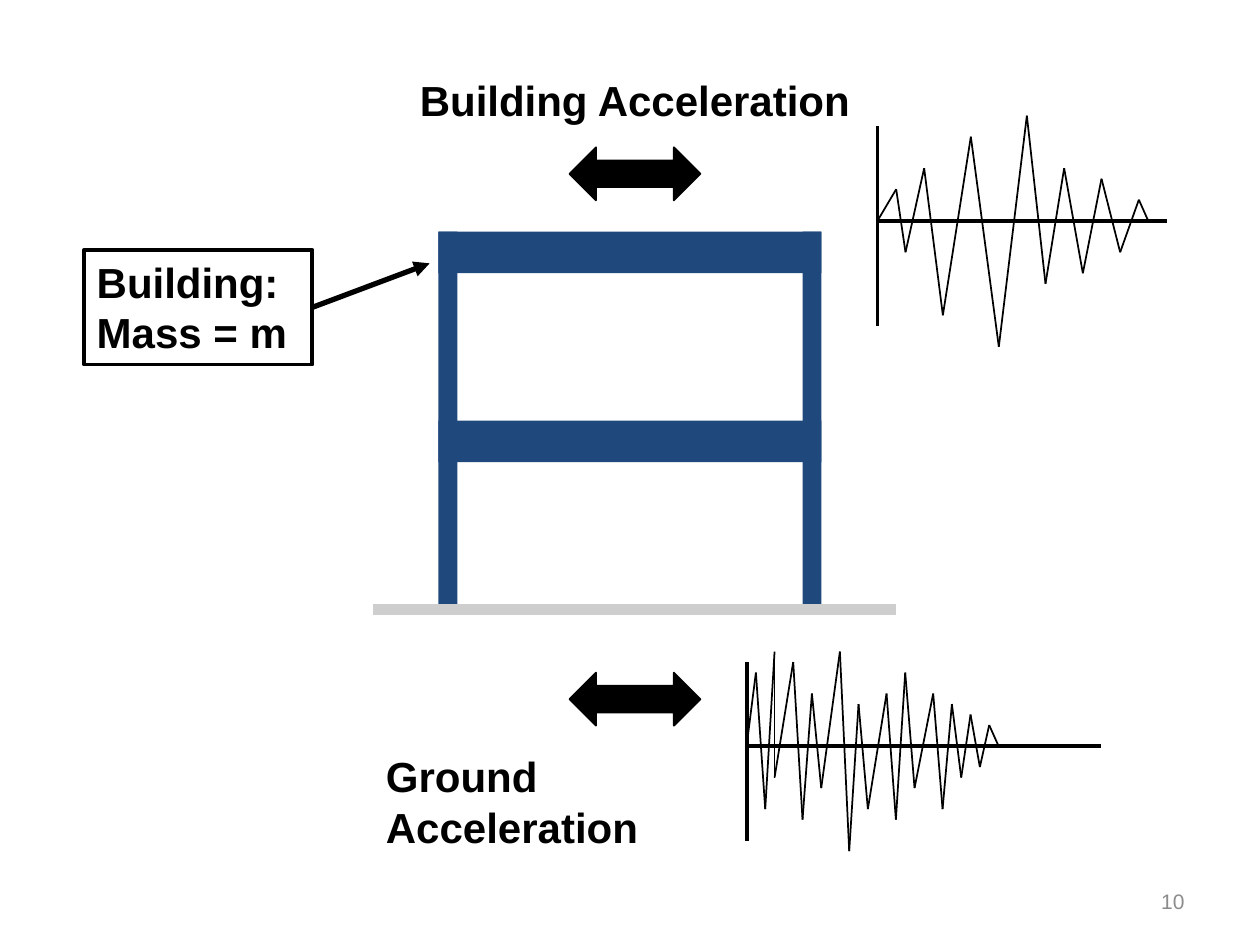
from itertools import pairwise

from lxml import etree
from pptx import Presentation
from pptx.dml.color import RGBColor
from pptx.enum.shapes import MSO_CONNECTOR, MSO_SHAPE
from pptx.enum.text import MSO_ANCHOR, PP_ALIGN
from pptx.oxml.ns import qn
from pptx.util import Cm, Pt

STRAIGHT = MSO_CONNECTOR.STRAIGHT
RECTANGLE = MSO_SHAPE.RECTANGLE
DOUBLE_ARROW = MSO_SHAPE.LEFT_RIGHT_ARROW
LEFT, CENTER, RIGHT = PP_ALIGN.LEFT, PP_ALIGN.CENTER, PP_ALIGN.RIGHT
TOP, MIDDLE = MSO_ANCHOR.TOP, MSO_ANCHOR.MIDDLE

BLACK, BLUE, GROUND_GRAY, NUMBER_GRAY = "000000", "1F497D", "CECECE", "8C8C8C"
RIGHT_SIDE = 3
STEP_X = 25.4 / 135
STEP_Y = 25.4 / 120

BUILDING_MOTION = [
    (0, 0), (2, 3), (3, -3), (5, 5), (7, -9), (10, 8), (13, -12), (16, 10),
    (18, -6), (20, 5), (22, -5), (24, 4), (26, -3), (28, 2), (29, 0),
]
GROUND_MOTION = [
    (0, 0), (1, 7), (2, -6), (3, 9), (3, -3), (5, 8), (6, -7), (7, 5), (8, -4),
    (10, 9), (11, -10), (12, 4), (13, -6), (15, 5), (16, -7), (17, 7), (18, -4),
    (20, 5), (21, -6), (22, 4), (23, -3), (24, 3), (25, -2), (26, 2), (27, 0),
]


def rgb(color):
    return RGBColor.from_string(color)


def add_block(shapes, kind, left, top, width, height, fill=None, line=None, weight=1):
    block = shapes.add_shape(kind, Cm(left), Cm(top), Cm(width), Cm(height))
    block.shadow.inherit = False
    if fill:
        block.fill.solid()
        block.fill.fore_color.rgb = rgb(fill)
    else:
        block.fill.background()
    if line:
        block.line.color.rgb = rgb(line)
        block.line.width = Pt(weight)
    else:
        block.line.fill.background()
    return block


def add_line(shapes, start, end, color=BLACK, weight=1):
    points = [Cm(value) for value in (*start, *end)]
    line = shapes.add_connector(STRAIGHT, *points)
    line.line.color.rgb = rgb(color)
    line.line.width = Pt(weight)
    etree.SubElement(line._element.spPr, qn("a:effectLst"))
    return line


def write_text(box, text, size=24, color=BLACK, bold=True, align=LEFT, anchor=TOP):
    frame = box.text_frame
    frame.word_wrap = True
    frame.vertical_anchor = anchor
    frame.text = text
    for para in frame.paragraphs:
        para.alignment = align
        para.font.name = "Arial"
        para.font.size = Pt(size)
        para.font.bold = bold
        para.font.color.rgb = rgb(color)


def add_text(shapes, text, left, top, width, height, **text_format):
    box = shapes.add_textbox(Cm(left), Cm(top), Cm(width), Cm(height))
    write_text(box, text, **text_format)


def add_building(shapes, left, top, width, height):
    column, beam = 0.38, 0.84
    parts = shapes.add_group_shape().shapes
    for x in (left, left + width - column):
        add_block(parts, RECTANGLE, x, top, column, height, BLUE)
    for y in (top, top + height / 2):
        add_block(parts, RECTANGLE, left, y, width, beam, BLUE)
    ground = top + height
    add_line(shapes, (left - 1.32, ground), (left + width + 1.5, ground), GROUND_GRAY, 6)


def add_motion_arrow(shapes, left, top):
    arrow = add_block(shapes, DOUBLE_ARROW, left, top, 2.64, 1.07, BLACK, BLACK)
    arrow.adjustments[0] = 0.5
    arrow.adjustments[1] = 0.5


def add_accelerogram(shapes, left, baseline, motion, length, above, below):
    def at(x, y):
        return left + x * STEP_X, baseline - y * STEP_Y

    add_line(shapes, at(0, above), at(0, -below), weight=2.25)
    add_line(shapes, at(0, 0), at(length, 0), weight=2.25)
    for start, end in pairwise(motion):
        add_line(shapes, at(*start), at(*end))


def add_mass_label(shapes, left, top, width, height, target):
    label = add_block(shapes, RECTANGLE, left, top, width, height, line=BLACK, weight=2.25)
    write_text(label, "Building:\nMass = m")
    pointer = add_line(shapes, (left + width, top + height / 2), target, weight=3)
    pointer.begin_connect(label, RIGHT_SIDE)
    etree.SubElement(pointer.line._get_or_add_ln(), qn("a:tailEnd"), type="triangle")


def main():
    deck = Presentation()
    deck.slide_width, deck.slide_height = Cm(25.4), Cm(19.05)
    page = deck.slides.add_slide(deck.slide_layouts[6])
    shapes = page.shapes

    add_building(shapes, 8.84, 4.67, 7.72, 7.62)
    add_motion_arrow(shapes, 11.48, 13.56)
    add_accelerogram(shapes, 15.05, 15.04, GROUND_MOTION, 38, 8, 9)
    add_text(shapes, "Ground Acceleration", 7.53, 15.01, 6.22, 2.31)
    add_motion_arrow(shapes, 11.48, 2.97)
    add_accelerogram(shapes, 17.69, 4.45, BUILDING_MOTION, 31, 9, 10)
    add_mass_label(shapes, 1.7, 5.04, 4.6, 2.31, (8.66, 5.31))
    add_text(shapes, "Building Acceleration", 8, 1.37, 9.6, 1.27, align=CENTER)
    add_text(shapes, "10", 18.2, 17.66, 5.93, 1.01, size=12, color=NUMBER_GRAY,
             bold=False, align=RIGHT, anchor=MIDDLE)

    deck.save("out.pptx")


if __name__ == "__main__":
    main()
